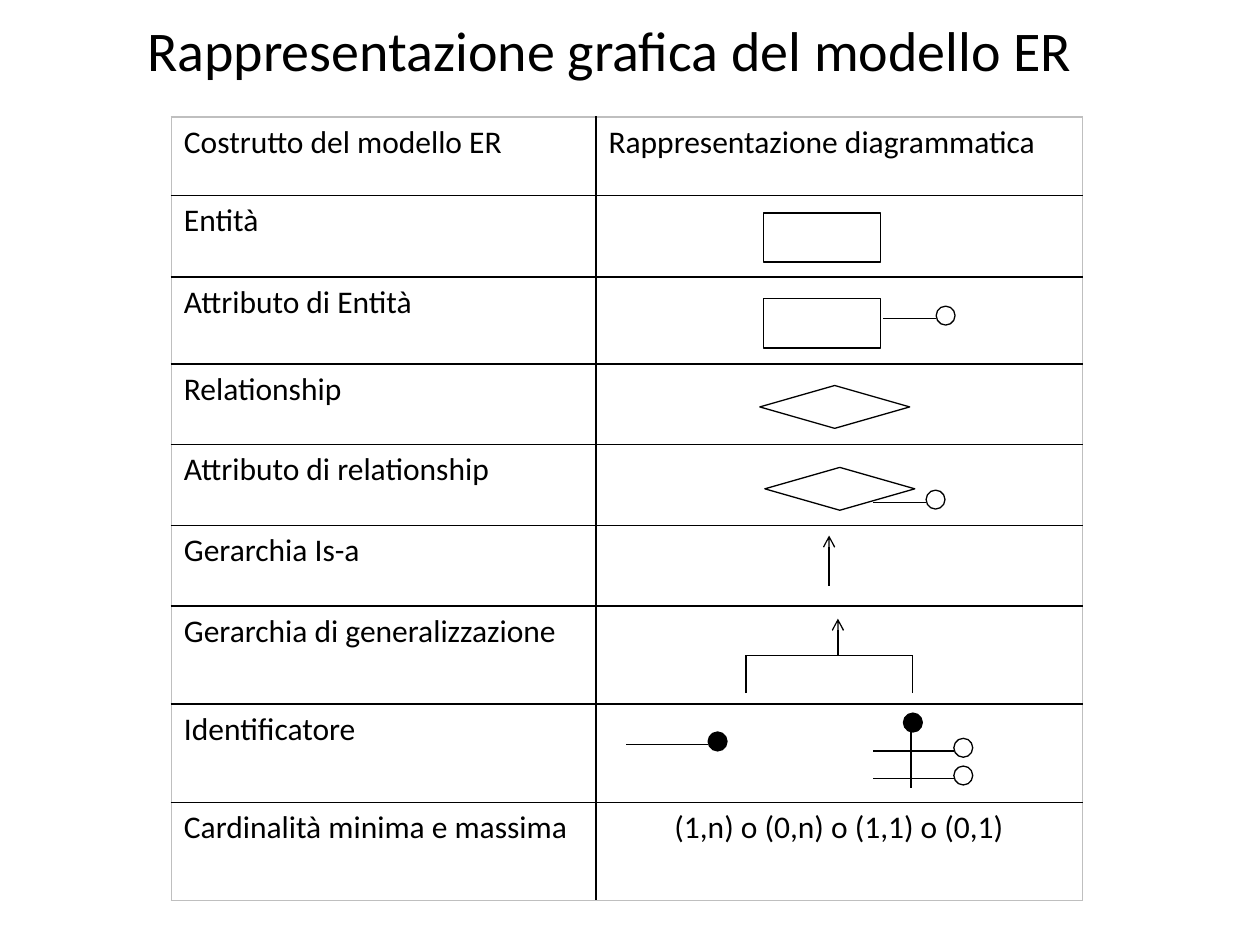
from typing import NamedTuple, Optional

from lxml.etree import SubElement
from pptx import Presentation
from pptx.dml.color import RGBColor
from pptx.enum.shapes import MSO_CONNECTOR as Link, MSO_SHAPE as Form
from pptx.enum.text import MSO_ANCHOR as Anchor, PP_ALIGN as Align
from pptx.oxml import parse_xml
from pptx.oxml.ns import nsdecls, qn
from pptx.util import Pt

PX = 9144  # 100 px to the inch
FONT = "Calibri"
BLACK = RGBColor(0x00, 0x00, 0x00)
WHITE = RGBColor(0xFF, 0xFF, 0xFF)
GREY = RGBColor(0xBF, 0xBF, 0xBF)
DOT = 15


class Row(NamedTuple):
    high: int
    left: str
    right: str = ""


class Node(NamedTuple):
    form: Form
    x: int
    y: int
    wide: int
    high: int
    line: float = 0.75
    fill: Optional[RGBColor] = None


class Edge(NamedTuple):
    x1: int
    y1: int
    x2: int
    y2: int
    arrow: bool = False


class Pin(NamedTuple):
    """A line that ends in a circle."""
    x1: int
    x2: int
    y: int
    fill: Optional[RGBColor] = None


COLS = [337, 386]
ROWS = [
    Row(62, "Costrutto del modello ER", "Rappresentazione diagrammatica"),
    Row(65, "Entità"),
    Row(69, "Attributo di Entità"),
    Row(64, "Relationship"),
    Row(64, "Attributo di relationship"),
    Row(64, "Gerarchia Is-a"),
    Row(78, "Gerarchia di generalizzazione"),
    Row(78, "Identificatore"),
    Row(78, "Cardinalità minima e massima", "(1,n) o (0,n) o (1,1) o (0,1)"),
]
NODES = [
    Node(Form.RECTANGLE, 606, 169, 93, 39, 1),
    Node(Form.RECTANGLE, 606, 237, 93, 39, 1),
    Node(Form.DIAMOND, 603, 306, 119, 34),
    Node(Form.DIAMOND, 607, 371, 119, 34),
]
EDGES = [
    Edge(658, 465, 658, 425, True),  # is-a
    Edge(665, 520, 665, 491, True),  # generalization
    Edge(724, 520, 592, 520),
    Edge(724, 550, 724, 520),
    Edge(592, 550, 592, 520),
    Edge(723, 581, 723, 625),  # compound identifier
]
PINS = [
    Pin(701, 743, 253),  # entity attribute
    Pin(693, 735, 399),  # relationship attribute
    Pin(497, 562, 591, BLACK),  # simple identifier
    Pin(693, 757, 596, WHITE),  # compound identifier
    Pin(693, 757, 618, WHITE),
]
KEY = Node(Form.OVAL, 717, 566, DOT, DOT, fill=BLACK)


def write(frame, text: str, size: int, align: Align) -> None:
    para = frame.paragraphs[0]
    para.alignment = align
    run = para.add_run()
    run.text = text
    run.font.name, run.font.size = FONT, Pt(size)
    run.font.color.rgb = BLACK


def border(cell, sides: dict) -> None:
    props = cell._tc.get_or_add_tcPr()
    for spot, (side, color) in enumerate(sides.items()):
        props.insert(spot, parse_xml(
            f'<a:ln{side} {nsdecls("a")} w="12700"><a:solidFill>'
            f'<a:srgbClr val="{color}"/></a:solidFill></a:ln{side}>'))


def draw_table(shapes, x: int, y: int) -> None:
    size = [sum(COLS), sum(row.high for row in ROWS)]
    table = shapes.add_table(len(ROWS), len(COLS), x * PX, y * PX,
                             *(n * PX for n in size)).table
    table.first_row = table.horz_banding = False
    for col, wide in zip(table.columns, COLS):
        col.width = wide * PX
    for r, row in enumerate(ROWS):
        table.rows[r].height = row.high * PX
        for c, text in enumerate((row.left, row.right)):
            cell = table.cell(r, c)
            cell.fill.background()
            # Grey frame outside, black rules inside
            outer = {"L": c == 0, "R": c == len(COLS) - 1,
                     "T": r == 0, "B": r == len(ROWS) - 1}
            border(cell, {s: GREY if out else BLACK for s, out in outer.items()})
            if text:
                mid = c == 1 and r > 0
                write(cell.text_frame, text, 18, Align.CENTER if mid else Align.LEFT)


def draw_node(shapes, node: Node) -> None:
    box = (node.x, node.y, node.wide, node.high)
    shape = shapes.add_shape(node.form, *(n * PX for n in box))
    shape.shadow.inherit = False
    if node.fill is None:
        shape.fill.background()
    else:
        shape.fill.solid()
        shape.fill.fore_color.rgb = node.fill
    shape.line.color.rgb = BLACK
    shape.line.width = Pt(node.line)


def draw_edge(shapes, edge: Edge) -> None:
    ends = (n * PX for n in edge[:4])
    link = shapes.add_connector(Link.STRAIGHT, *ends)
    link.line.color.rgb = BLACK
    link.line.width = Pt(0.75)
    if edge.arrow:
        SubElement(link.line._get_or_add_ln(), qn("a:tailEnd"), type="arrow")
    SubElement(link._element.spPr, qn("a:effectLst"))


def draw_pin(shapes, pin: Pin) -> None:
    draw_edge(shapes, Edge(pin.x1, pin.y, pin.x2, pin.y))
    draw_node(shapes, Node(Form.OVAL, pin.x2, pin.y - 10, DOT, DOT, fill=pin.fill))


def main() -> None:
    deck = Presentation()
    deck.slide_width, deck.slide_height = 1000 * PX, 750 * PX
    slide = deck.slides.add_slide(deck.slide_layouts[5])
    shapes = slide.shapes

    # Title
    title = shapes.title
    title.left, title.top = 13 * PX, 9 * PX
    title.width, title.height = 942 * PX, 60 * PX
    title.text_frame.vertical_anchor = Anchor.MIDDLE
    write(title.text_frame, "Rappresentazione grafica del modello ER", 32, Align.CENTER)

    # Table of constructs
    draw_table(shapes, 136, 93)

    # Symbols
    for node in NODES:
        draw_node(shapes, node)
    for edge in EDGES:
        draw_edge(shapes, edge)
    for pin in PINS:
        draw_pin(shapes, pin)
    draw_node(shapes, KEY)

    deck.save("out.pptx")


if __name__ == "__main__":
    main()
